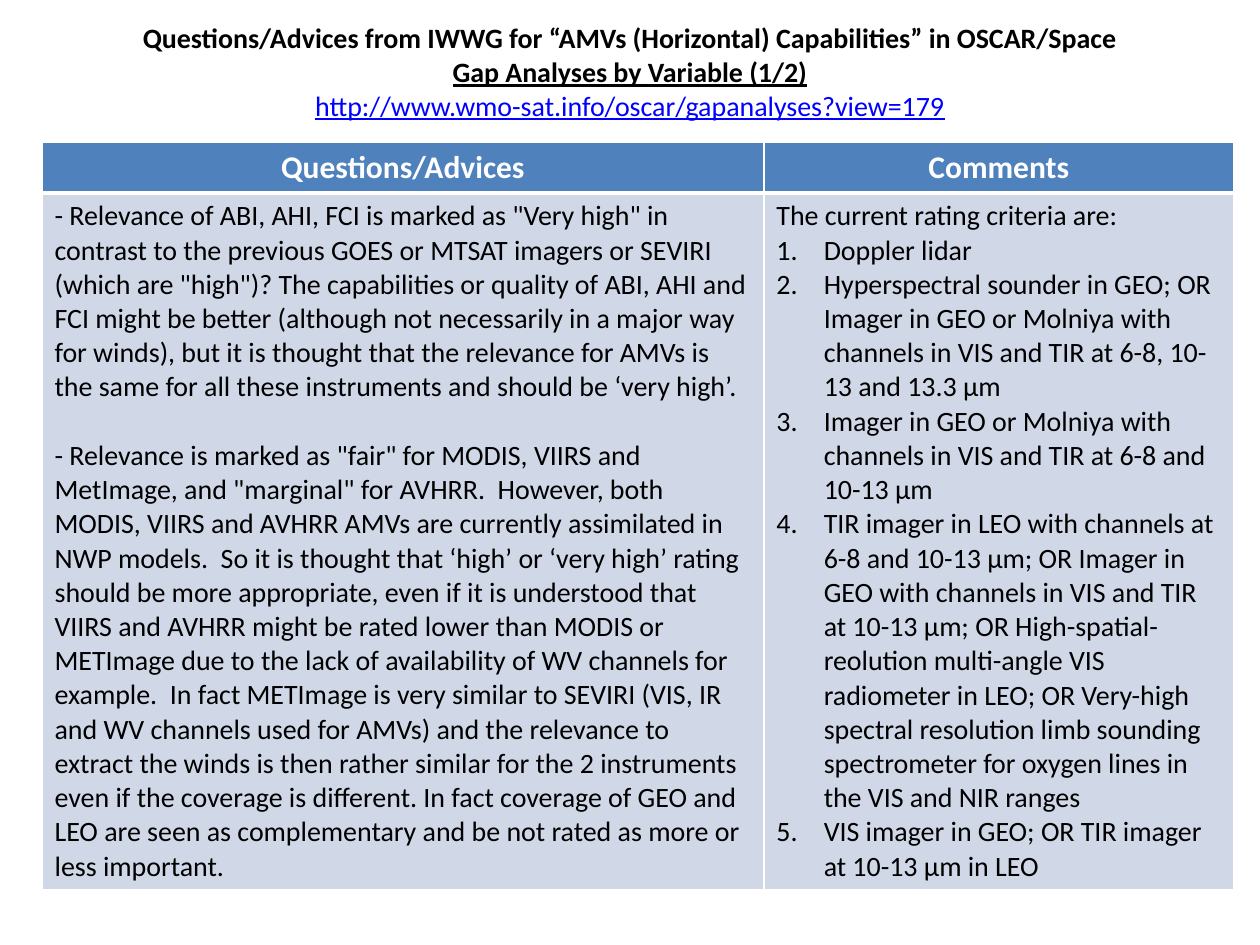
from pptx import Presentation
from pptx.dml.color import RGBColor
from pptx.enum.text import MSO_ANCHOR, PP_ALIGN
from pptx.oxml.ns import qn
from pptx.util import Pt
from lxml.etree import SubElement

FONT = "Calibri"
BLACK, WHITE, LINK = "000000", "FFFFFF", "0000FF"
HEADER_FILL, BODY_FILL = "4F81BD", "D0D8E8"


def color(hex_text):
    return RGBColor.from_string(hex_text)


def add_borders(cell, widths):
    """Draw white cell borders; widths maps L, R, T, B to points."""
    properties = cell._tc.get_or_add_tcPr()
    for side, width in widths.items():
        line = SubElement(properties, qn(f"a:ln{side}"), w=str(Pt(width)))
        fill = SubElement(line, qn("a:solidFill"))
        SubElement(fill, qn("a:srgbClr"), val=WHITE)


deck = Presentation()
deck.slide_width, deck.slide_height = Pt(720), Pt(540)
page = deck.slides.add_slide(deck.slide_layouts[5])

# Title
title = page.shapes.title
title.left, title.top, title.width, title.height = Pt(36), Pt(1.5), Pt(648), Pt(78.5)
title.text_frame.vertical_anchor = MSO_ANCHOR.MIDDLE
para = title.text_frame.paragraphs[0]
para.alignment = PP_ALIGN.CENTER
para.font.name, para.font.size = FONT, Pt(16)
title_lines = [
    ("Questions/Advices from IWWG for “AMVs (Horizontal) Capabilities” in OSCAR/Space", BLACK, True, False),
    ("Gap Analyses by Variable (1/2)", BLACK, True, True),
    ("http://www.wmo-sat.info/oscar/gapanalyses?view=179", LINK, False, True),
]
for index, (text, ink, bold, underline) in enumerate(title_lines):
    if index:
        para.add_line_break()
    span = para.add_run()
    span.text = text
    span.font.color.rgb = color(ink)
    span.font.bold, span.font.underline = bold, underline

# Table
headers = ["Questions/Advices", "Comments"]
advices = [
    "- Relevance of ABI, AHI, FCI is marked as \"Very high\" in contrast to the previous GOES or MTSAT "
    "imagers or SEVIRI (which are \"high\")? The capabilities or quality of ABI, AHI and FCI might be "
    "better (although not necessarily in a major way for winds), but it is thought that the relevance "
    "for AMVs is the same for all these instruments and should be ‘very high’.",
    "- Relevance is marked as \"fair\" for MODIS, VIIRS and MetImage, and \"marginal\" for AVHRR.  However, "
    "both MODIS, VIIRS and AVHRR AMVs are currently assimilated in NWP models.  So it is thought that "
    "‘high’ or ‘very high’ rating should be more appropriate, even if it is understood that VIIRS and "
    "AVHRR might be rated lower than MODIS or METImage due to the lack of availability of WV channels "
    "for example.  In fact METImage is very similar to SEVIRI (VIS, IR and WV channels used for AMVs) "
    "and the relevance to extract the winds is then rather similar for the 2 instruments even if the "
    "coverage is different. In fact coverage of GEO and LEO are seen as complementary and be not rated "
    "as more or less important.",
]
comments = [
    "The current rating criteria are:",
    "Doppler lidar",
    "Hyperspectral sounder in GEO; OR Imager in GEO or Molniya with channels in VIS and TIR at 6-8, "
    "10-13 and 13.3 μm",
    "Imager in GEO or Molniya with channels in VIS and TIR at 6-8 and 10-13 μm",
    "TIR imager in LEO with channels at 6-8 and 10-13 μm; OR Imager in GEO with channels in VIS and TIR "
    "at 10-13 μm; OR High-spatial-reolution multi-angle VIS radiometer in LEO; OR Very-high spectral "
    "resolution limb sounding spectrometer for oxygen lines in the VIS and NIR ranges",
    "VIS imager in GEO; OR TIR imager at 10-13 μm in LEO",
]
table = page.shapes.add_table(2, 2, Pt(24), Pt(81), Pt(681), Pt(427)).table
for column, width in zip(table.columns, (412.5, 268.5)):
    column.width = Pt(width)
for row, height in zip(table.rows, (29, 398)):
    row.height = Pt(height)

for index, text in enumerate(headers):
    cell = table.cell(0, index)
    add_borders(cell, {"L": 1, "R": 1, "T": 1, "B": 3})
    cell.fill.solid()
    cell.fill.fore_color.rgb = color(HEADER_FILL)
    para = cell.text_frame.paragraphs[0]
    para.text = text
    para.alignment = PP_ALIGN.CENTER
    para.font.name, para.font.size, para.font.bold = FONT, Pt(18), True
    para.font.color.rgb = color(WHITE)

for index, texts in enumerate((advices, comments)):
    cell = table.cell(1, index)
    add_borders(cell, {"L": 1, "R": 1, "T": 3, "B": 1})
    cell.fill.solid()
    cell.fill.fore_color.rgb = color(BODY_FILL)
    frame = cell.text_frame
    for number, text in enumerate(texts):
        para = frame.add_paragraph() if number else frame.paragraphs[0]
        para.text = text
        if number and texts is advices:
            para.space_before = Pt(19.5)
        elif number:
            properties = para._p.get_or_add_pPr()
            properties.set("marL", str(Pt(27)))
            properties.set("indent", str(Pt(-27)))
            SubElement(properties, qn("a:buFont"), typeface="+mj-lt")
            SubElement(properties, qn("a:buAutoNum"), type="arabicPeriod")
        para.font.name, para.font.size, para.font.bold = FONT, Pt(16), False
        para.font.color.rgb = color(BLACK)

deck.save("out.pptx")
